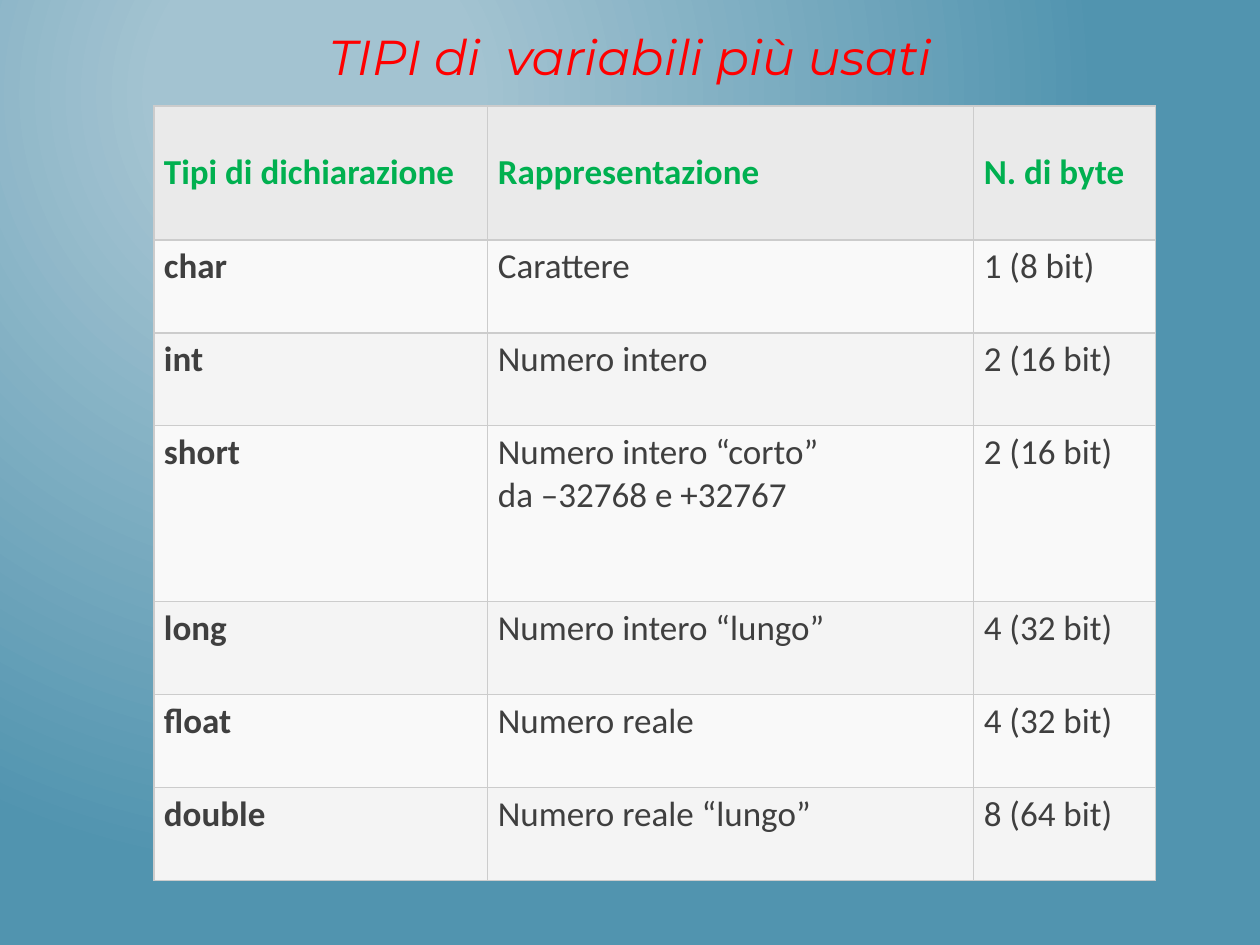
from lxml.etree import SubElement
from pptx import Presentation
from pptx.dml.color import RGBColor
from pptx.enum.text import MSO_ANCHOR, MSO_AUTO_SIZE, PP_ALIGN
from pptx.oxml.ns import qn
from pptx.util import Pt

PX = 914400 // 126
LIGHT_BLUE = RGBColor(0xA3, 0xC3, 0xD1)
DEEP_BLUE = RGBColor(0x51, 0x94, 0xAF)
RED = RGBColor(0xFF, 0x00, 0x00)
GREEN = RGBColor(0x00, 0xB0, 0x50)
DARK = RGBColor(0x3F, 0x3F, 0x3F)
HEADER = RGBColor(0xEA, 0xEA, 0xEA)
BANDS = [RGBColor(0xF4, 0xF4, 0xF4), RGBColor(0xF9, 0xF9, 0xF9)]
BORDER = RGBColor(0xCC, 0xCC, 0xCC)

ROWS = [
    ("Tipi di dichiarazione", "Rappresentazione", "N. di byte"),
    ("char", "Carattere", "1 (8 bit)"),
    ("int", "Numero intero", "2 (16 bit)"),
    ("short", "Numero intero “corto”\nda –32768 e +32767", "2 (16 bit)"),
    ("long", "Numero intero “lungo”", "4 (32 bit)"),
    ("float", "Numero reale", "4 (32 bit)"),
    ("double", "Numero reale “lungo”", "8 (64 bit)"),
]
COL_WIDTHS = [334, 486, 182]
ROW_HEIGHTS = [134, 93, 93, 176, 93, 93, 93]


def add_run(p, text, font, size, color):
    r = p.add_run()
    r.text = text
    r.font.name = font
    r.font.size = Pt(size)
    r.font.color.rgb = color
    return r


def set_borders(cell):
    tcPr = cell._tc.get_or_add_tcPr()
    for side in ("a:lnL", "a:lnR", "a:lnT", "a:lnB"):
        ln = SubElement(tcPr, qn(side), w=str(Pt(0.75)))
        fill = SubElement(ln, qn("a:solidFill"))
        SubElement(fill, qn("a:srgbClr"), val=str(BORDER))


prs = Presentation()
prs.slide_width = 1260 * PX
prs.slide_height = 945 * PX
s = prs.slides.add_slide(prs.slide_layouts[5])

# Radial background
bg = s.background.fill
bg.gradient()
for stop, color, position in zip(bg.gradient_stops, (LIGHT_BLUE, DEEP_BLUE), (0.2, 1)):
    stop.color.rgb = color
    stop.position = position
grad = s.element.find(".//" + qn("a:gradFill"))
grad.remove(grad.find(qn("a:lin")))
path = SubElement(grad, qn("a:path"), path="circle")
SubElement(path, qn("a:fillToRect"), l="50000", t="20000", r="100000", b="100000")

# Title
title = s.shapes.title
title.left, title.top, title.width, title.height = 0, 20 * PX, 1260 * PX, 86 * PX
tf = title.text_frame
tf.auto_size = MSO_AUTO_SIZE.NONE
tf.vertical_anchor = MSO_ANCHOR.TOP
p = tf.paragraphs[0]
p.alignment = PP_ALIGN.CENTER
p.space_before = Pt(2)
add_run(p, "TIPI di  variabili più usati", "Montserrat", 28, RED).font.italic = True

# Table of variable types
table = s.shapes.add_table(len(ROWS), len(COL_WIDTHS), 154 * PX, 106 * PX,
                           sum(COL_WIDTHS) * PX, sum(ROW_HEIGHTS) * PX).table
for column, width in zip(table.columns, COL_WIDTHS):
    column.width = width * PX
for row, height in zip(table.rows, ROW_HEIGHTS):
    row.height = height * PX

for i, texts in enumerate(ROWS):
    for j, text in enumerate(texts):
        cell = table.cell(i, j)
        set_borders(cell)
        cell.fill.solid()
        cell.fill.fore_color.rgb = BANDS[i % 2] if i else HEADER
        cell.margin_left = cell.margin_right = 10 * PX
        cell.margin_top = cell.margin_bottom = 5 * PX
        cell.vertical_anchor = MSO_ANCHOR.TOP if i else MSO_ANCHOR.MIDDLE
        tf = cell.text_frame
        for k, line in enumerate(text.split("\n")):
            p = tf.add_paragraph() if k else tf.paragraphs[0]
            r = add_run(p, line, "Calibri", 20, DARK if i else GREEN)
            r.font.bold = i == 0 or j == 0

prs.save("out.pptx")
